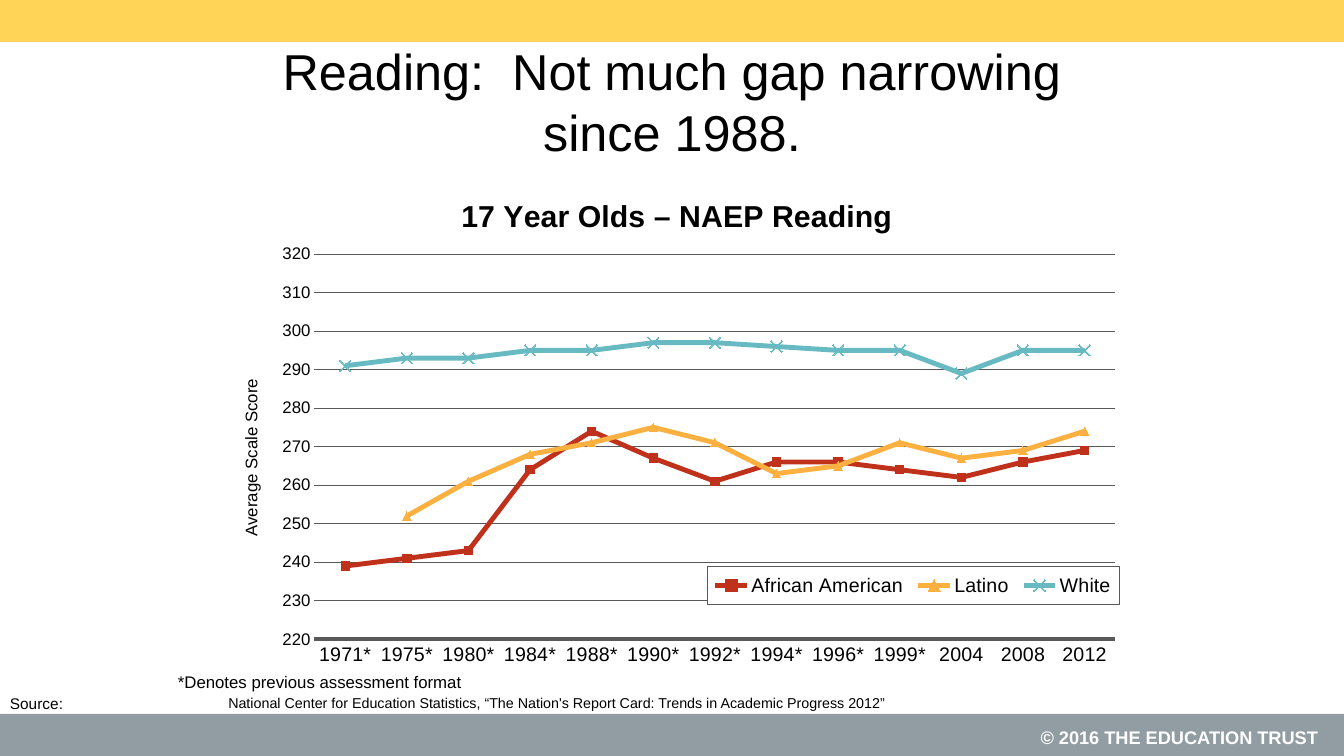
from dataclasses import dataclass

from lxml import etree
from pptx import Presentation
from pptx.chart.data import CategoryChartData
from pptx.dml.color import RGBColor
from pptx.enum.chart import XL_CHART_TYPE, XL_LEGEND_POSITION, XL_MARKER_STYLE, XL_TICK_MARK
from pptx.enum.shapes import MSO_SHAPE
from pptx.enum.text import MSO_ANCHOR, MSO_AUTO_SIZE, PP_ALIGN
from pptx.oxml import parse_xml
from pptx.oxml.ns import nsdecls, qn
from pptx.util import Pt


@dataclass(frozen=True)
class Theme:
    font: str = "Arial"
    black: str = "000000"
    white: str = "FFFFFF"
    yellow: str = "FFD457"
    gray: str = "919CA3"
    rule: str = "595959"
    red: str = "BF311A"
    orange: str = "FBB040"
    teal: str = "67BAC1"
    title: float = 36
    chart_title: float = 21.6
    label: float = 14
    copyright: float = 13
    note: float = 12
    source: float = 11
    citation: float = 10.2


T = Theme()

YEARS = ["1971*", "1975*", "1980*", "1984*", "1988*", "1990*", "1992*",
         "1994*", "1996*", "1999*", "2004", "2008", "2012"]
# name, colour, marker style, marker size, scores
SCORES = [
    ("African American", T.red, XL_MARKER_STYLE.SQUARE, 6,
     [239, 241, 243, 264, 274, 267, 261, 266, 266, 264, 262, 266, 269]),
    ("Latino", T.orange, XL_MARKER_STYLE.TRIANGLE, 6,
     [None, 252, 261, 268, 271, 275, 271, 263, 265, 271, 267, 269, 274]),
    ("White", T.teal, XL_MARKER_STYLE.X, 8,
     [291, 293, 293, 295, 295, 297, 297, 296, 295, 295, 289, 295, 295]),
]


def assign(obj, values):
    for name, value in values.items():
        setattr(obj, name, value)


class SlideBuilder:
    def __init__(self, prs, theme):
        self.t = theme
        self.s = prs.slides.add_slide(prs.slide_layouts[5])

    def font(self, font, size, color=None, bold=False):
        assign(font, {"name": self.t.font, "size": Pt(size), "bold": bold})
        font.color.rgb = RGBColor.from_string(color or self.t.black)

    def line(self, line, color, width):
        line.color.rgb = RGBColor.from_string(color)
        line.width = Pt(width)

    def layout(self, element, index, **fractions):
        """Place a chart part by fractions of the chart area."""
        for old in element.findall(qn("c:layout")):
            element.remove(old)
        node = parse_xml(f"<c:layout {nsdecls('c')}><c:manualLayout/></c:layout>")
        element.insert(index, node)
        if element.tag == qn("c:plotArea"):
            etree.SubElement(node[0], qn("c:layoutTarget"), val="inner")
        for mode in ("xMode", "yMode"):
            etree.SubElement(node[0], qn("c:" + mode), val="edge")
        for name, value in fractions.items():
            etree.SubElement(node[0], qn("c:" + name), val=str(value))

    def band(self, y, h, color):
        sp = self.s.shapes.add_shape(MSO_SHAPE.RECTANGLE, 0, Pt(y), Pt(960), Pt(h))
        sp.shadow.inherit = False
        sp.fill.solid()
        sp.fill.fore_color.rgb = RGBColor.from_string(color)
        sp.line.fill.background()

    def title(self, text, x, y, w, h):
        sp = self.s.shapes.title
        assign(sp, {"left": Pt(x), "top": Pt(y), "width": Pt(w), "height": Pt(h)})
        tf = sp.text_frame
        assign(tf, {"text": text, "word_wrap": True, "auto_size": MSO_AUTO_SIZE.NONE,
                    "vertical_anchor": MSO_ANCHOR.MIDDLE})
        p = tf.paragraphs[0]
        p.alignment = PP_ALIGN.CENTER
        self.font(p.runs[0].font, self.t.title)

    def text(self, text, x, y, w, h, size, color=None, bold=False, **paragraph):
        tf = self.s.shapes.add_textbox(Pt(x), Pt(y), Pt(w), Pt(h)).text_frame
        assign(tf, {"text": text, "word_wrap": True})
        p = tf.paragraphs[0]
        assign(p, paragraph)
        self.font(p.runs[0].font, size, color, bold)

    def chart(self, heading, axis_name, x, y, w, h):
        data = CategoryChartData()
        data.categories = YEARS
        for name, *_, values in SCORES:
            data.add_series(name, values)
        chart = self.s.shapes.add_chart(
            XL_CHART_TYPE.LINE_MARKERS, Pt(x), Pt(y), Pt(w), Pt(h), data).chart
        self.font(chart.font, 18)

        # Headings
        chart.has_title = True
        cat, val = chart.category_axis, chart.value_axis
        val.has_title = True
        for title, text, size, bold, fx, fy in (
                (chart.chart_title, heading, self.t.chart_title, True, 0.266, 0.045),
                (val.axis_title, axis_name, self.t.note, False, 0.03, 0.41)):
            title.text_frame.text = text
            self.font(title.text_frame.paragraphs[0].runs[0].font, size, bold=bold)
            self.layout(title._element, 1, x=fx, y=fy)
        body = val.axis_title._element.find(".//" + qn("a:bodyPr"))
        body.set("rot", "-5400000")
        body.set("vert", "horz")

        # Axes
        for axis, size in ((cat, self.t.label), (val, self.t.note)):
            assign(axis, {"major_tick_mark": XL_TICK_MARK.NONE,
                          "minor_tick_mark": XL_TICK_MARK.NONE})
            self.font(axis.tick_labels.font, size)
        assign(val, {"minimum_scale": 220, "maximum_scale": 320, "major_unit": 10,
                     "has_major_gridlines": True})
        self.line(cat.format.line, self.t.rule, 2.5)
        self.line(val.major_gridlines.format.line, self.t.rule, 0.75)
        val.format.line.fill.background()

        # Series
        plot = chart.plots[0]
        plot.vary_by_categories = False
        for series, (_, color, style, size, _) in zip(plot.series, SCORES):
            series.smooth = False
            self.line(series.format.line, color, 3.5)
            marker = series.marker
            assign(marker, {"style": style, "size": size})
            self.line(marker.format.line, color, 0.75)
            if style == XL_MARKER_STYLE.X:
                marker.format.fill.background()
            else:
                marker.format.fill.solid()
                marker.format.fill.fore_color.rgb = RGBColor.from_string(color)

        # Legend and plot placement
        chart.has_legend = True
        legend = chart.legend
        assign(legend, {"position": XL_LEGEND_POSITION.CORNER, "include_in_layout": True})
        self.font(legend.font, self.t.label)
        node = legend._element
        self.layout(node, 1, x=0.538, y=0.787, w=0.446, h=0.074)
        node.find(qn("c:overlay")).addnext(parse_xml(
            f'<c:spPr {nsdecls("c", "a")}>'
            f'<a:solidFill><a:srgbClr val="{self.t.white}"/></a:solidFill>'
            f'<a:ln w="9525"><a:solidFill><a:srgbClr val="{self.t.rule}"/></a:solidFill></a:ln>'
            '</c:spPr>'))
        plot_area = chart._chartSpace.find(".//" + qn("c:plotArea"))
        self.layout(plot_area, 0, x=0.113, y=0.17, w=0.867, h=0.76)


def main():
    prs = Presentation()
    prs.slide_width, prs.slide_height = Pt(960), Pt(540)
    b = SlideBuilder(prs, T)

    # Bands and copyright
    b.band(510, 30, T.gray)
    b.text("© 2016 THE EDUCATION TRUST", 652.3, 514.8, 296, 23, T.copyright, T.white, True,
           alignment=PP_ALIGN.RIGHT, line_spacing=Pt(16))
    b.band(0, 30, T.yellow)

    # Title and chart
    b.title("Reading:  Not much gap narrowing since 1988.", 156, 30, 648, 84)
    b.chart("17 Year Olds – NAEP Reading", "Average Scale Score", 150, 120, 660, 362)

    # Notes
    b.text("Source:", 0, 492, 64, 21, T.source)
    b.text("*Denotes previous assessment format", 120, 476, 342, 22, T.note)
    b.text("National Center for Education Statistics, “The Nation's Report Card: "
           "Trends in Academic Progress 2012”", 156, 492, 684, 18, T.citation)

    prs.save("out.pptx")


if __name__ == "__main__":
    main()
